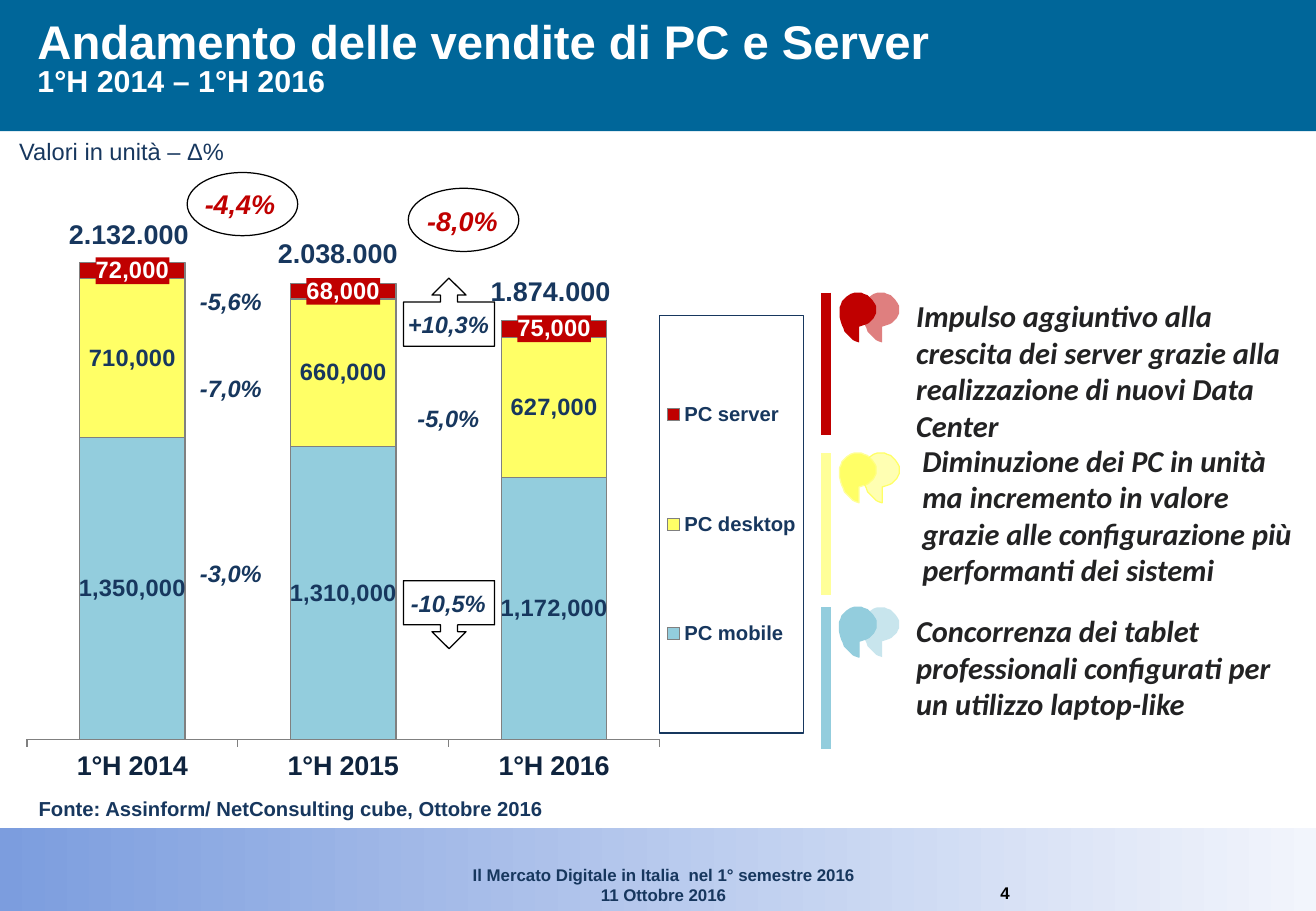
import dataclasses
import typing

import lxml.etree
import pptx
import pptx.chart.chart
import pptx.chart.data
import pptx.dml.color
import pptx.enum.chart
import pptx.enum.shapes
import pptx.enum.text
import pptx.oxml
import pptx.oxml.ns
import pptx.slide
import pptx.util

EMU_PER_PX = 9144
ShapeKind = pptx.enum.shapes.MSO_SHAPE
Align = pptx.enum.text.PP_ALIGN
Anchor = pptx.enum.text.MSO_ANCHOR
qn = pptx.oxml.ns.qn


@dataclasses.dataclass(frozen=True)
class Theme:
    header: str = "006699"
    footer_start: str = "7C9DDE"
    footer_end: str = "F2F5FC"
    navy: str = "17375E"
    axis_text: str = "0F243E"
    red: str = "C00000"
    yellow: str = "FFFF66"
    pale_yellow: str = "FFFF99"
    blue: str = "93CDDD"
    grey: str = "808080"
    ink: str = "222223"
    white: str = "FFFFFF"
    black: str = "000000"
    font: str = "Arial"
    note_font: str = "Calibri"
    title_size: int = 28
    large: int = 18
    total_size: int = 16
    label_size: int = 14
    small: int = 12
    footer_size: int = 10


THEME = Theme()


class Box(typing.NamedTuple):
    left: int
    top: int
    width: int
    height: int


@dataclasses.dataclass(frozen=True)
class Label:
    text: str
    box: Box
    size: int = THEME.label_size
    color: str = THEME.navy
    bold: bool = True
    italic: bool = False
    font: str = THEME.font
    align: Align = Align.CENTER
    anchor: Anchor = Anchor.TOP
    wrap: bool = False
    inset: bool = True


@dataclasses.dataclass(frozen=True)
class Quote:
    text: str
    top: int
    text_box: Box
    color: str
    bar_color: str
    front_line: str | None = None
    back_line: str | None = None


class Series(typing.NamedTuple):
    name: str
    values: tuple[int, ...]
    color: str
    label_color: str
    label_fill: str | None = None


PERIODS = ("1°H 2014", "1°H 2015", "1°H 2016")
SERIES = (
    Series("PC mobile", (1350000, 1310000, 1172000), THEME.blue, THEME.navy),
    Series("PC desktop", (710000, 660000, 627000), THEME.yellow, THEME.navy),
    Series("PC server", (72000, 68000, 75000), THEME.red, THEME.white, THEME.red),
)
CHART_BOX = Box(9, 138, 659, 529)
PLOT_LAYOUT = (0.02, 0.02, 0.79, 0.87)
LEGEND_LAYOUT = (0.81, 0.23, 0.18, 0.65)


def change(text: str, center_x: int, top: int) -> Label:
    return Label(text, Box(center_x - 46, top, 92, 37), italic=True, anchor=Anchor.MIDDLE)


def total_change(text: str, left: int, top: int) -> Label:
    return Label(text, Box(left, top, 83, 41), THEME.total_size, THEME.red, italic=True, anchor=Anchor.MIDDLE)


def total(text: str, left: int, top: int) -> Label:
    return Label(text, Box(left, top, 120, 37), THEME.total_size)


LABELS = (
    Label("Il Mercato Digitale in Italia  nel 1° semestre 2016\n11 Ottobre 2016", Box(243, 707, 606, 44), THEME.footer_size),
    Label("4", Box(797, 722, 60, 27), THEME.footer_size, THEME.black),
    Label("Valori in unità – Δ%", Box(6, 108, 189, 34), bold=False, align=Align.LEFT),
    Label("Fonte: Assinform/ NetConsulting cube, Ottobre 2016", Box(22, 651, 440, 30), THEME.small, align=Align.LEFT),
    total("2.132.000", 46, 174),
    total("2.038.000", 218, 190),
    total("1.874.000", 393, 221),
    total_change("-4,4%", 156, 147),
    total_change("-8,0%", 339, 161),
    change("-5,6%", 190, 229),
    change("-7,0%", 190, 301),
    change("-3,0%", 190, 453),
    change("+10,3%", 369, 248),
    change("-5,0%", 369, 326),
    change("-10,5%", 369, 478),
)
QUOTES = (
    Quote("Impulso aggiuntivo alla crescita dei server grazie alla realizzazione di nuovi Data Center",
          241, Box(754, 245, 320, 121), THEME.red, THEME.red),
    Quote("Diminuzione dei PC in unità ma incremento in valore grazie alle configurazione più performanti dei sistemi",
          373, Box(759, 364, 315, 121), THEME.yellow, THEME.pale_yellow, THEME.pale_yellow, THEME.yellow),
    Quote("Concorrenza dei tablet professionali configurati per un utilizzo laptop-like",
          500, Box(754, 504, 320, 91), THEME.blue, THEME.blue, THEME.blue),
)
QUOTE_MARK = (
    (16, 41), (16, 28), (19, 27), (22, 26), (24, 25), (26, 23), (28, 21), (29, 19), (30, 17), (30, 14),
    (30, 11), (29, 9), (27, 6), (25, 4), (23, 2), (20, 1), (18, 0), (15, 0), (12, 0), (9, 1), (6, 3),
    (4, 5), (2, 7), (1, 10), (0, 12), (0, 16), (0, 20), (1, 24), (2, 27), (3, 29), (4, 32), (6, 34),
    (8, 36), (11, 39), (13, 40),
)


def px(length: int) -> pptx.util.Emu:
    return pptx.util.Emu(length * EMU_PER_PX)


def rgb(color: str) -> pptx.dml.color.RGBColor:
    return pptx.dml.color.RGBColor.from_string(color)


def style_font(font, size: int, color: str, bold: bool = True, italic: bool = False, name: str = THEME.font) -> None:
    font.size = pptx.util.Pt(size)
    font.color.rgb = rgb(color)
    font.bold, font.italic, font.name = bold, italic, name


def style_shape(shape, fill: str | None = None, line: str | None = None) -> None:
    shape.shadow.inherit = False
    if fill:
        shape.fill.solid()
        shape.fill.fore_color.rgb = rgb(fill)
    else:
        shape.fill.background()
    if line:
        shape.line.color.rgb = rgb(line)
        shape.line.width = pptx.util.Pt(0.75)
    else:
        shape.line.fill.background()


def add_shape(slide: pptx.slide.Slide, kind: ShapeKind, box: Box, fill: str | None = None, line: str | None = None):
    shape = slide.shapes.add_shape(kind, *map(px, box))
    style_shape(shape, fill, line)
    return shape


def add_label(slide: pptx.slide.Slide, label: Label):
    text_frame = slide.shapes.add_textbox(*map(px, label.box)).text_frame
    text_frame.text = label.text
    text_frame.word_wrap = label.wrap
    text_frame.vertical_anchor = label.anchor
    if not label.inset:
        text_frame.margin_left = text_frame.margin_right = text_frame.margin_top = text_frame.margin_bottom = 0
    for paragraph in text_frame.paragraphs:
        paragraph.alignment = label.align
        for run in paragraph.runs:
            style_font(run.font, label.size, label.color, label.bold, label.italic, label.font)
    return text_frame


def add_bands(slide: pptx.slide.Slide) -> None:
    add_shape(slide, ShapeKind.RECTANGLE, Box(0, 0, 1083, 108), THEME.header)
    footer = add_shape(slide, ShapeKind.RECTANGLE, Box(0, 682, 1083, 68))
    footer.fill.gradient()
    footer.fill.gradient_angle = 0
    for stop, color, position in zip(footer.fill.gradient_stops, (THEME.footer_start, THEME.footer_end), (0, 1)):
        stop.color.rgb = rgb(color)
        stop.position = position
    title = Label("Andamento delle vendite di PC e Server\v1°H 2014 – 1°H 2016", Box(21, 0, 1062, 100),
                  THEME.title_size, THEME.white, align=Align.LEFT, anchor=Anchor.MIDDLE, wrap=True)
    paragraph = add_label(slide, title).paragraphs[0]
    paragraph.line_spacing = 0.8
    paragraph.runs[1].font.size = pptx.util.Pt(THEME.large)


def chart_layout(fractions: tuple[float, ...], inner: bool = False):
    target = '<c:layoutTarget val="inner"/>' if inner else ""
    modes = "".join(f'<c:{axis}Mode val="edge"/>' for axis in "xy")
    values = "".join(f'<c:{key} val="{value}"/>' for key, value in zip("xywh", fractions))
    namespace = pptx.oxml.ns.nsdecls("c")
    return pptx.oxml.parse_xml(f"<c:layout {namespace}><c:manualLayout>{target}{modes}{values}</c:manualLayout></c:layout>")


def chart_paint(color: str, outline: bool = False):
    paint = f'<a:solidFill><a:srgbClr val="{color}"/></a:solidFill>'
    content = f'<a:ln w="9525">{paint}</a:ln>' if outline else paint
    return pptx.oxml.parse_xml(f'<c:spPr {pptx.oxml.ns.nsdecls("c", "a")}>{content}</c:spPr>')


def remove_layout(element) -> None:
    for layout in element.findall(qn("c:layout")):
        element.remove(layout)


def style_legend(chart: pptx.chart.chart.Chart) -> None:
    chart.has_legend = True
    legend = chart.legend
    legend.position = pptx.enum.chart.XL_LEGEND_POSITION.RIGHT
    legend.include_in_layout = False
    style_font(legend.font, THEME.small, THEME.navy)
    remove_layout(legend._element)
    overlay = legend._element.find(qn("c:overlay"))
    overlay.addprevious(chart_layout(LEGEND_LAYOUT))
    overlay.addnext(chart_paint(THEME.navy, outline=True))


def add_sales_chart(slide: pptx.slide.Slide) -> None:
    data = pptx.chart.data.CategoryChartData(number_format="#,##0")
    data.categories = PERIODS
    for series in SERIES:
        data.add_series(series.name, series.values)
    kind = pptx.enum.chart.XL_CHART_TYPE.COLUMN_STACKED
    chart = slide.shapes.add_chart(kind, *map(px, CHART_BOX), data).chart
    chart.has_title = False
    style_font(chart.font, THEME.large, THEME.black, bold=False)
    style_legend(chart)
    plot_area = chart._chartSpace.chart.plotArea
    remove_layout(plot_area)
    plot_area.insert(0, chart_layout(PLOT_LAYOUT, inner=True))
    chart.value_axis.visible = False
    chart.value_axis.has_major_gridlines = False
    chart.value_axis.minimum_scale, chart.value_axis.maximum_scale = 0, 2500000
    category_axis = chart.category_axis
    category_axis.major_tick_mark = pptx.enum.chart.XL_TICK_MARK.OUTSIDE
    category_axis.format.line.color.rgb = rgb(THEME.grey)
    style_font(category_axis.tick_labels.font, THEME.total_size, THEME.axis_text)
    plot = chart.plots[0]
    plot.gap_width = plot.overlap = 100
    plot.vary_by_categories = False
    for series, bars in zip(SERIES, plot.series):
        bars.format.fill.solid()
        bars.format.fill.fore_color.rgb = rgb(series.color)
        bars.format.line.color.rgb = rgb(THEME.grey)
        bars.format.line.width = pptx.util.Pt(0.75)
        labels = bars.data_labels
        labels.show_value = True
        labels.number_format = "#,##0"
        labels.number_format_is_linked = False
        style_font(labels.font, THEME.label_size, series.label_color)
        if series.label_fill:
            labels._element.find(qn("c:txPr")).addprevious(chart_paint(series.label_fill))


def add_quote_mark(slide: pptx.slide.Slide, left: int, top: int, fill: str, line: str | None):
    builder = slide.shapes.build_freeform(*QUOTE_MARK[0], scale=float(EMU_PER_PX))
    builder.add_line_segments(QUOTE_MARK[1:], close=True)
    shape = builder.convert_to_shape(px(left), px(top))
    style_shape(shape, fill, line)
    return shape


def add_quote(slide: pptx.slide.Slide, quote: Quote) -> None:
    add_quote_mark(slide, 691, quote.top, quote.color, quote.front_line)
    back = add_quote_mark(slide, 710, quote.top, quote.color, quote.back_line)
    color = back._element.spPr.find(qn("a:solidFill")).find(qn("a:srgbClr"))
    lxml.etree.SubElement(color, qn("a:alpha"), val="50000")
    straight = pptx.enum.shapes.MSO_CONNECTOR.STRAIGHT
    bar = slide.shapes.add_connector(straight, *map(px, (680, quote.top, 680, quote.top + 117)))
    bar.line.color.rgb = rgb(quote.bar_color)
    bar.line.width = pptx.util.Pt(6)
    lxml.etree.SubElement(bar._element.spPr, qn("a:effectLst"))
    add_label(slide, Label(quote.text, quote.text_box, THEME.large, THEME.ink, italic=True, font=THEME.note_font,
                           align=Align.LEFT, wrap=True, inset=False))


def main() -> None:
    presentation = pptx.Presentation()
    presentation.slide_width, presentation.slide_height = px(1083), px(750)
    slide = presentation.slides.add_slide(presentation.slide_layouts[6])
    add_bands(slide)
    add_sales_chart(slide)
    for label in LABELS:
        add_label(slide, label)
    for quote in QUOTES:
        add_quote(slide, quote)
    for left, top in ((154, 142), (336, 155)):
        add_shape(slide, ShapeKind.OVAL, Box(left, top, 91, 52), line=THEME.black)
    for top, rotation in ((229, 0), (478, 180)):
        callout = add_shape(slide, ShapeKind.UP_ARROW_CALLOUT, Box(332, top, 75, 56), line=THEME.black)
        callout.rotation = rotation
    presentation.save("out.pptx")


if __name__ == "__main__":
    main()
